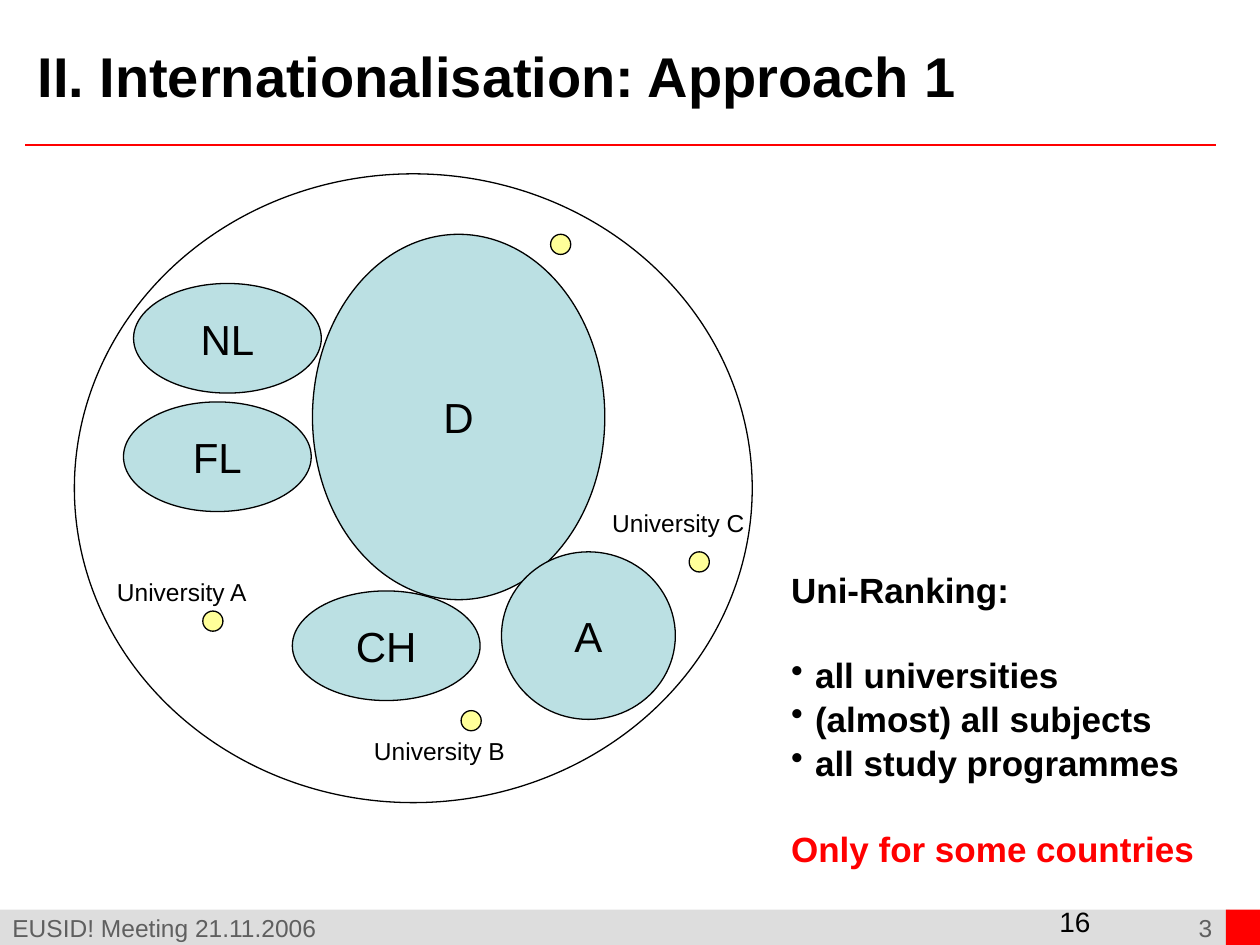
"""Build the slide on ranking universities across countries."""
from dataclasses import dataclass
from typing import Optional

from lxml import etree
from pptx import Presentation
from pptx.dml.color import RGBColor
from pptx.enum import shapes, text
from pptx.oxml.ns import qn
from pptx.util import Emu, Inches, Pt

COLUMNS, ROWS = 100, 75
WIDTH, HEIGHT = Inches(10), Inches(7.5)
BLACK = RGBColor(0x00, 0x00, 0x00)
RED = RGBColor(0xFF, 0x00, 0x00)
BAND_GREY = RGBColor(0xDD, 0xDD, 0xDD)
FOOTER_GREY = RGBColor(0x5F, 0x5F, 0x5F)
COUNTRY_BLUE = RGBColor(0xBB, 0xE0, 0xE3)
UNIVERSITY_YELLOW = RGBColor(0xFF, 0xFF, 0x99)
FONT = "Arial"
DOT = 1.6
RECTANGLE = shapes.MSO_SHAPE.RECTANGLE
OVAL = shapes.MSO_SHAPE.OVAL


@dataclass(frozen=True)
class Area:
    """A place on the grid of columns and rows."""
    column: float
    row: float
    columns: float
    rows: float

    def emu(self) -> tuple:
        """Return left, top, width and height on the slide."""
        return (across(self.column), down(self.row),
                across(self.columns), down(self.rows))


@dataclass(frozen=True)
class Country:
    """A country's oval and its code."""
    code: str
    area: Area


@dataclass(frozen=True)
class Label:
    """One line of free-standing text."""
    words: str
    area: Area
    size: int = 14
    color: RGBColor = BLACK
    bold: bool = False
    wrap: bool = False
    align: text.PP_ALIGN = text.PP_ALIGN.LEFT


@dataclass(frozen=True)
class Point:
    """One line of the ranking summary."""
    words: str
    gap: int = 1
    bullet: bool = False
    color: RGBColor = BLACK


COUNTRIES = (
    Country("D", Area(24.8, 18.6, 23.2, 29)),
    Country("A", Area(39.8, 43.8, 13.8, 13.3)),
    Country("CH", Area(23.2, 46.9, 14.9, 8.7)),
    Country("NL", Area(10.6, 22.5, 14.9, 8.7)),
    Country("FL", Area(9.8, 31.9, 14.9, 8.7)),
)
UNIVERSITY_SPOTS = ((16.1, 48.5), (36.6, 56.4), (43.7, 18.6), (54.7, 43.8))
LABELS = (
    Label("3", Area(87, 72, 10.2, 3), color=FOOTER_GREY, wrap=True,
          align=text.PP_ALIGN.RIGHT),
    Label("EUSID! Meeting 21.11.2006", Area(0, 72, 86.2, 3),
          color=FOOTER_GREY, wrap=True),
    Label("II. Internationalisation: Approach 1", Area(2, 2.8, 92.4, 6.3),
          size=32, bold=True, wrap=True),
    Label("16", Area(83.1, 71.3, 4.5, 3.7), size=16),
    Label("University A", Area(8.3, 45.3, 12.4, 3.3)),
    Label("University B", Area(28.7, 57.9, 12.4, 3.3)),
    Label("University C", Area(47.6, 39.8, 12.5, 3.3)),
)
SUMMARY = (
    Point("Uni-Ranking:", gap=0),
    Point("all universities", gap=25, bullet=True),
    Point("(almost) all subjects", bullet=True),
    Point("all study programmes", bullet=True),
    Point("Only for some countries", gap=25, color=RED),
)


def across(columns: float) -> Emu:
    """Turn columns into a length."""
    return Emu(round(WIDTH * columns / COLUMNS))


def down(rows: float) -> Emu:
    """Turn rows into a length."""
    return Emu(round(HEIGHT * rows / ROWS))


def add_words(paragraph, words: str, size: int, color: RGBColor,
              bold: bool = False) -> None:
    """Add one styled run to a paragraph."""
    run = paragraph.add_run()
    run.text = words
    run.font.name = FONT
    run.font.size = Pt(size)
    run.font.bold = bold
    run.font.color.rgb = color


def draw_shape(slide, kind, area: Area, fill: Optional[RGBColor],
               outlined: bool = True):
    """Draw a flat shape, with or without fill and outline."""
    figure = slide.shapes.add_shape(kind, *area.emu())
    figure.shadow.inherit = False
    if fill is None:
        figure.fill.background()
    else:
        figure.fill.solid()
        figure.fill.fore_color.rgb = fill
    if outlined:
        figure.line.color.rgb = BLACK
        figure.line.width = Pt(0.75)
    else:
        figure.line.fill.background()
    return figure


def draw_country(slide, country: Country) -> None:
    """Draw a country's oval with its code in the middle."""
    frame = draw_shape(slide, OVAL, country.area, COUNTRY_BLUE).text_frame
    frame.word_wrap = False
    frame.vertical_anchor = text.MSO_ANCHOR.MIDDLE
    frame.paragraphs[0].alignment = text.PP_ALIGN.CENTER
    add_words(frame.paragraphs[0], country.code, 24, BLACK)


def draw_label(slide, label: Label) -> None:
    """Write one label."""
    frame = slide.shapes.add_textbox(*label.area.emu()).text_frame
    frame.word_wrap = label.wrap
    frame.paragraphs[0].alignment = label.align
    add_words(frame.paragraphs[0], label.words, label.size, label.color, label.bold)


def draw_rule(slide) -> None:
    """Draw the red rule under the title."""
    rule = slide.shapes.add_connector(
        shapes.MSO_CONNECTOR.STRAIGHT,
        across(2), down(11.5), across(96.5), down(11.5))
    rule.line.color.rgb = RED
    rule.line.width = Pt(0.75)
    etree.SubElement(rule._element.spPr, qn("a:effectLst"))


def draw_summary(slide, area: Area) -> None:
    """Write the ranking summary with its bullets."""
    frame = slide.shapes.add_textbox(*area.emu()).text_frame
    frame.word_wrap = True
    for index, point in enumerate(SUMMARY):
        paragraph = frame.add_paragraph() if index else frame.paragraphs[0]
        properties = paragraph._p.get_or_add_pPr()
        properties.set("marL", str(across(1.9)))
        properties.set("indent", str(-across(1.9)))
        if point.bullet:
            etree.SubElement(properties, qn("a:buChar"), char="•")
        paragraph.space_before = Pt(point.gap)
        add_words(paragraph, point.words, 20, point.color, bold=True)


def main() -> None:
    """Build and save the slide."""
    deck = Presentation()
    deck.slide_width, deck.slide_height = WIDTH, HEIGHT
    slide = deck.slides.add_slide(deck.slide_layouts[6])
    draw_shape(slide, RECTANGLE, Area(0, 72.2, 97.6, 2.8), BAND_GREY, outlined=False)
    draw_rule(slide)
    draw_shape(slide, RECTANGLE, Area(97.3, 72.2, 2.7, 2.8), RED, outlined=False)
    for country in COUNTRIES:
        draw_country(slide, country)
    draw_shape(slide, OVAL, Area(5.9, 13.8, 53.8, 49.9), None)
    for column, row in UNIVERSITY_SPOTS:
        draw_shape(slide, OVAL, Area(column, row, DOT, DOT), UNIVERSITY_YELLOW)
    for label in LABELS:
        draw_label(slide, label)
    draw_summary(slide, Area(61.8, 44.6, 36.2, 24.3))
    deck.save("out.pptx")


if __name__ == "__main__":
    main()
